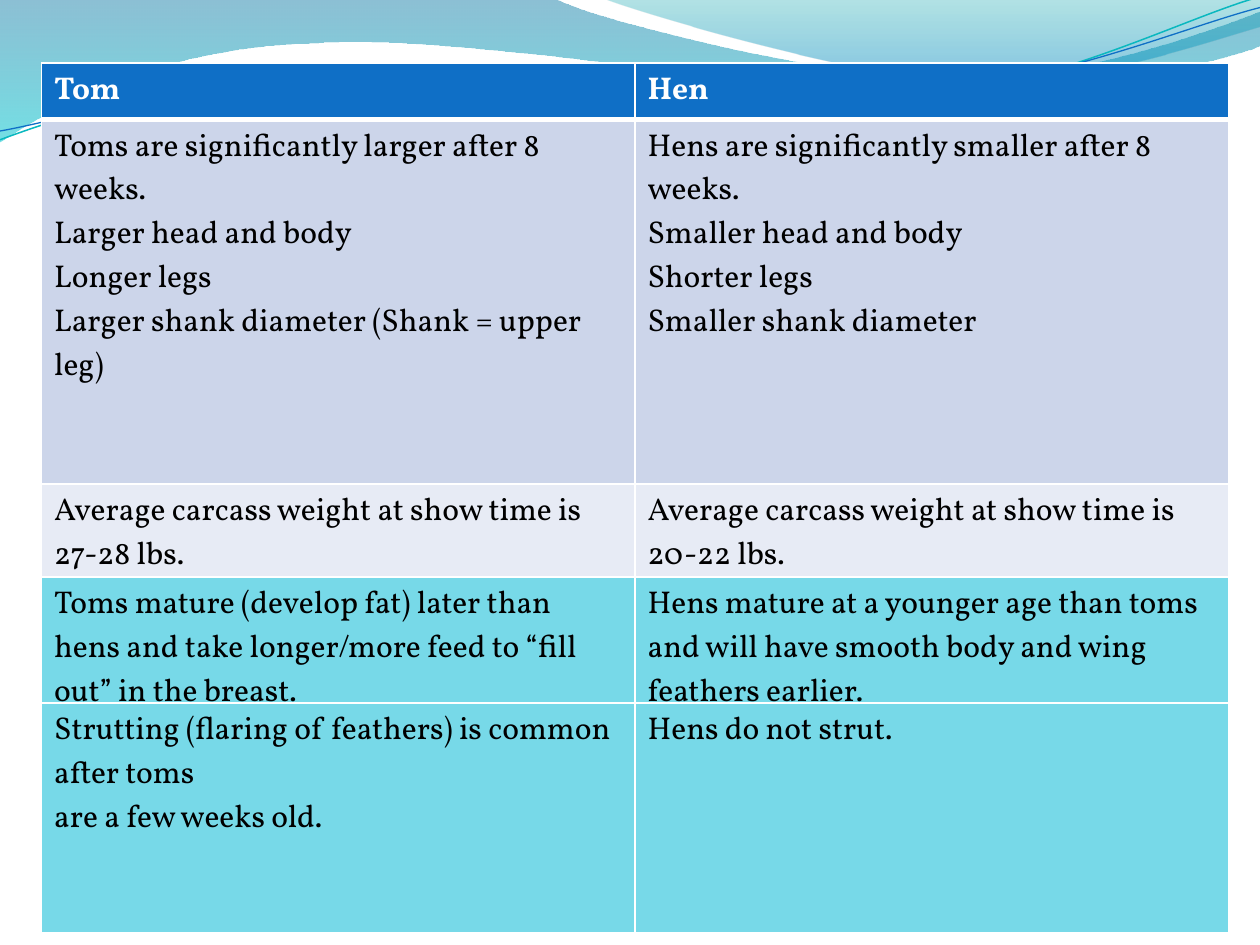
from lxml import etree
from pptx import Presentation
from pptx.dml.color import RGBColor
from pptx.oxml.ns import qn
from pptx.util import Inches, Pt

FONT = "Vollkorn"
BLANK_LAYOUT = 6
UNITS_PER_INCH = 1000
WHITE, BLACK, BLUE = "FFFFFF", "000000", "0F6FC6"
LAVENDER, PALE, AQUA = "CCD5EA", "E7EBF5", "77D9E8"

WAVES = [
    ([(0, 0), (4.4, -0.01), (4.76, 0.17, 6.64, 0.63, 7.58, 0.63),
      (8.53, 0.63, 9.58, 0.26, 10, 0.09), (10.01, 0.36),
      (9.83, 0.44, 8.7, 0.76, 7.46, 0.75), (6.22, 0.75, 3.82, 0.28, 2.57, 0.34),
      (1.29, 0.36, 0.46, 0.83, -0.01, 1.13)],
     [(0, "0074A1", 45), (1, "00C6CF", 55)]),
    ([(4.79, -0.01), (5.09, 0.11, 6.82, 0.62, 7.69, 0.65),
      (8.56, 0.69, 9.61, 0.32, 10, 0.21), (10, 0)],
     [(0, "00A1A9", 30), (0.8, "008BBF", 45)]),
]
STRANDS = [
    ([(0, 1.11), (0.48, 0.93, 1.58, 0.57, 2.77, 0.52),
      (3.95, 0.47, 5.93, 0.89, 7.13, 0.8), (8.33, 0.71, 9.38, 0.15, 9.98, -0.02)],
     "0AB8BF", 0.85),
    ([(0, 1.04), (0.47, 0.96, 1.64, 0.61, 2.83, 0.56),
      (4.03, 0.51, 5.97, 0.84, 7.17, 0.75), (8.36, 0.67, 9.41, 0.21, 10, 0.06)],
     BLUE, 0.75),
]

COMPARISONS = [
    (0.5, [
        (0.45, BLUE, "Tom", "Hen"),
        (2.89, LAVENDER,
         "Toms are significantly larger after 8 weeks.\vLarger head and body\v"
         "Longer legs\vLarger shank diameter (Shank = upper leg)",
         "Hens are significantly smaller after 8 weeks.\vSmaller head and body\v"
         "Shorter legs\vSmaller shank diameter"),
        (1.33, PALE, "Average carcass weight at show time is 27-28 lbs.",
         "Average carcass weight at show time is 20-22 lbs."),
    ]),
    (4.58, [
        (1.12, AQUA,
         "Toms mature (develop fat) later than hens and take longer/more feed to "
         "“fill out” in the breast.",
         "Hens mature at a younger age than toms and will have smooth body and wing "
         "feathers earlier."),
    ]),
    (5.58, [
        (1.82, AQUA,
         "Strutting (flaring of feathers) is common after toms\vare a few weeks old.",
         "Hens do not strut."),
    ]),
]


def color(value):
    """Turn a hex string into a colour."""
    return RGBColor.from_string(value)


def add_outline(slide, outline, close):
    """Draw an outline of lines and cubic curves given in slide inches."""
    segments = [[round(value * UNITS_PER_INCH) for value in part] for part in outline]
    anchors = [part[-2:] for part in segments]
    origin = [min(values) for values in zip(*anchors)]
    builder = slide.shapes.build_freeform(*anchors[0], scale=Inches(1) / UNITS_PER_INCH)
    builder.add_line_segments(anchors[1:], close=close)
    shape = builder.convert_to_shape()
    shape.shadow.inherit = False
    lines = list(shape.element.iter(qn("a:lnTo")))
    for line, segment in zip(lines, segments[1:]):
        if len(segment) == 6:
            curve = etree.Element(qn("a:cubicBezTo"))
            for x, y in zip(segment[::2], segment[1::2]):
                etree.SubElement(curve, qn("a:pt"), x=str(x - origin[0]),
                                 y=str(y - origin[1]))
            line.getparent().replace(line, curve)
    return shape


def add_wave(slide, outline, stops):
    """Add a translucent wave with a gradient running downwards."""
    wave = add_outline(slide, outline, True)
    wave.line.fill.background()
    wave.fill.gradient()
    wave.fill.gradient_angle = 270
    for stop, (position, shade, _) in zip(wave.fill.gradient_stops, stops):
        stop.position = position
        stop.color.rgb = color(shade)
    shades = list(wave.element.spPr.iter(qn("a:srgbClr")))
    for shade, (_, _, opacity) in zip(shades, stops):
        etree.SubElement(shade, qn("a:alpha"), val=str(opacity * 1000))


def add_strand(slide, outline, shade, width):
    """Add a thin curved line."""
    strand = add_outline(slide, outline, False)
    strand.fill.background()
    strand.line.color.rgb = color(shade)
    strand.line.width = Pt(width)


def add_borders(cell, widths):
    """Give a cell white borders, with widths in points by side."""
    properties = cell._tc.get_or_add_tcPr()
    for index, (side, width) in enumerate(widths.items()):
        border = etree.Element(qn(f"a:ln{side}"), w=str(Pt(width)))
        fill = etree.SubElement(border, qn("a:solidFill"))
        etree.SubElement(fill, qn("a:srgbClr"), val=WHITE)
        properties.insert(index, border)


def fill_cell(cell, text, fill):
    """Write one cell; the blue heading cells are bold white."""
    heading = fill == BLUE
    cell.fill.solid()
    cell.fill.fore_color.rgb = color(fill)
    below_heading = fill == LAVENDER
    add_borders(cell, {"L": 1, "R": 1, "T": 3 if below_heading else 1,
                       "B": 3 if heading else 1})
    cell.text = text
    formats = {"name": FONT, "size": Pt(18), "bold": heading}
    for run in cell.text_frame.paragraphs[0].runs:
        for attribute, value in formats.items():
            setattr(run.font, attribute, value)
        run.font.color.rgb = color(WHITE if heading else BLACK)


def add_comparison(slide, left, top, width, rows):
    """Add a two-column table comparing toms and hens."""
    height = sum(row[0] for row in rows)
    table = slide.shapes.add_table(len(rows), 2, Inches(left), Inches(top),
                                   Inches(width), Inches(height)).table
    for row, (row_height, fill, *texts) in zip(table.rows, rows):
        row.height = Inches(row_height)
        for cell, text in zip(row.cells, texts):
            fill_cell(cell, text, fill)


def main():
    """Build the slide and save it."""
    deck = Presentation()
    deck.slide_width, deck.slide_height = Inches(10), Inches(7.5)
    slide = deck.slides.add_slide(deck.slide_layouts[BLANK_LAYOUT])
    for wave in WAVES:
        add_wave(slide, *wave)
    for strand in STRANDS:
        add_strand(slide, *strand)
    for top, rows in COMPARISONS:
        add_comparison(slide, 0.33, top, 9.42, rows)
    deck.save("out.pptx")


if __name__ == "__main__":
    main()
